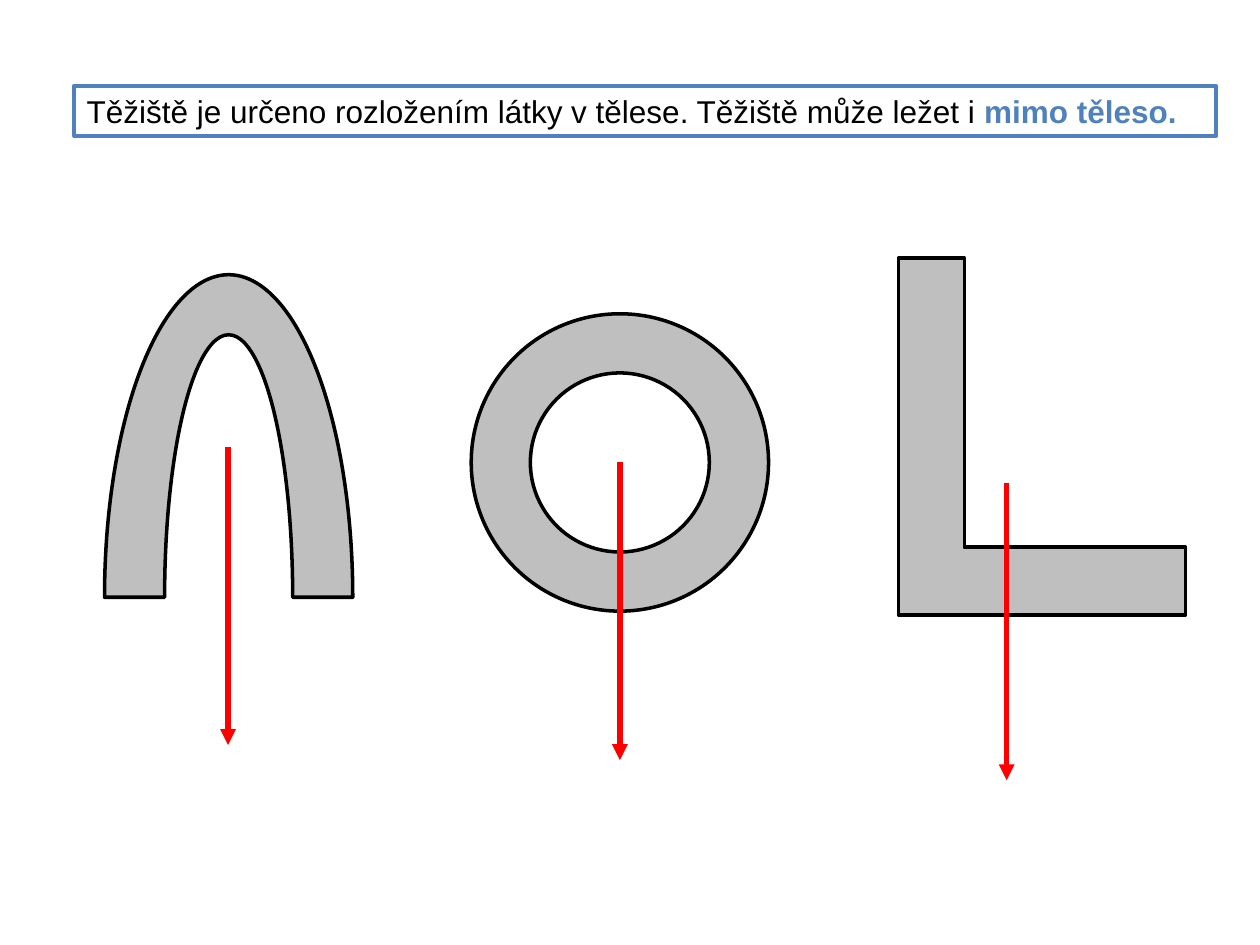
from pptx import Presentation
from pptx.dml.color import RGBColor
from pptx.enum.shapes import MSO_CONNECTOR, MSO_SHAPE
from pptx.enum.text import MSO_ANCHOR, PP_ALIGN
from pptx.oxml.ns import qn
from pptx.util import Inches, Pt
from lxml.etree import SubElement

BLUE = RGBColor(0x4F, 0x81, 0xBD)
GREY = RGBColor(0xBF, 0xBF, 0xBF)
BLACK = RGBColor(0, 0, 0)
RED = RGBColor(0xFF, 0, 0)

WIDTH, HEIGHT = Inches(10), Inches(7.5)
ARROW_LENGTH = 31.5

# Bodies: shape, (left, top, width, height) in % of the slide, adjustments
BODIES = [
    (MSO_SHAPE.BLOCK_ARC, (8.3, 29.07, 19.7, 68.27), (108, 0, 0.242)),
    (MSO_SHAPE.DONUT, (37.4, 33.2, 23.6, 31.47), (0.199,)),
    (MSO_SHAPE.CORNER, (71.3, 27.33, 22.8, 37.73), (0.235, 0.23)),
]
# Centres of gravity: x, y in % of the slide
CENTRES = [(18.1, 47.33), (49.2, 48.93), (79.9, 51.07)]

STATEMENT = [
    ("Těžiště je určeno rozložením látky v tělese. Těžiště může ležet i ",
     BLACK, False),
    ("mimo těleso.", BLUE, True),
]


def across(share):
    return int(WIDTH * share / 100)


def down(share):
    return int(HEIGHT * share / 100)


def set_line(shape, color, width):
    shape.line.color.rgb = color
    shape.line.width = Pt(width)


def add_statement(s, box, runs):
    left, top, width, height = box
    sp = s.shapes.add_textbox(across(left), down(top),
                              across(width), down(height))
    set_line(sp, BLUE, 2.25)
    tf = sp.text_frame
    tf.word_wrap = True
    tf.vertical_anchor = MSO_ANCHOR.TOP
    p = tf.paragraphs[0]
    p.alignment = PP_ALIGN.LEFT
    for text, color, bold in runs:
        r = p.add_run()
        r.text = text
        r.font.color.rgb = color
        for name, value in {"name": "Arial", "size": Pt(18),
                            "bold": bold}.items():
            setattr(r.font, name, value)


def add_body(s, kind, box, adjustments):
    left, top, width, height = box
    sp = s.shapes.add_shape(kind, across(left), down(top),
                            across(width), down(height))
    sp.shadow.inherit = False
    sp.fill.solid()
    sp.fill.fore_color.rgb = GREY
    set_line(sp, BLACK, 2)
    for i, value in enumerate(adjustments):
        sp.adjustments[i] = value


def add_weight(s, x, y):
    arrow = s.shapes.add_connector(MSO_CONNECTOR.STRAIGHT, across(x), down(y),
                                   across(x), down(y + ARROW_LENGTH))
    set_line(arrow, RED, 3)
    SubElement(arrow.line._get_or_add_ln(), qn("a:tailEnd"), type="triangle")
    SubElement(arrow._element.spPr, qn("a:effectLst"))


def main():
    prs = Presentation()
    prs.slide_width, prs.slide_height = WIDTH, HEIGHT
    s = prs.slides.add_slide(prs.slide_layouts[6])

    # Statement in a frame
    add_statement(s, (5.9, 9.07, 90.6, 5.33), STATEMENT)

    # Bodies, then the weight acting from each centre of gravity
    for body in BODIES:
        add_body(s, *body)
    for centre in CENTRES:
        add_weight(s, *centre)

    prs.save("out.pptx")


if __name__ == "__main__":
    main()
